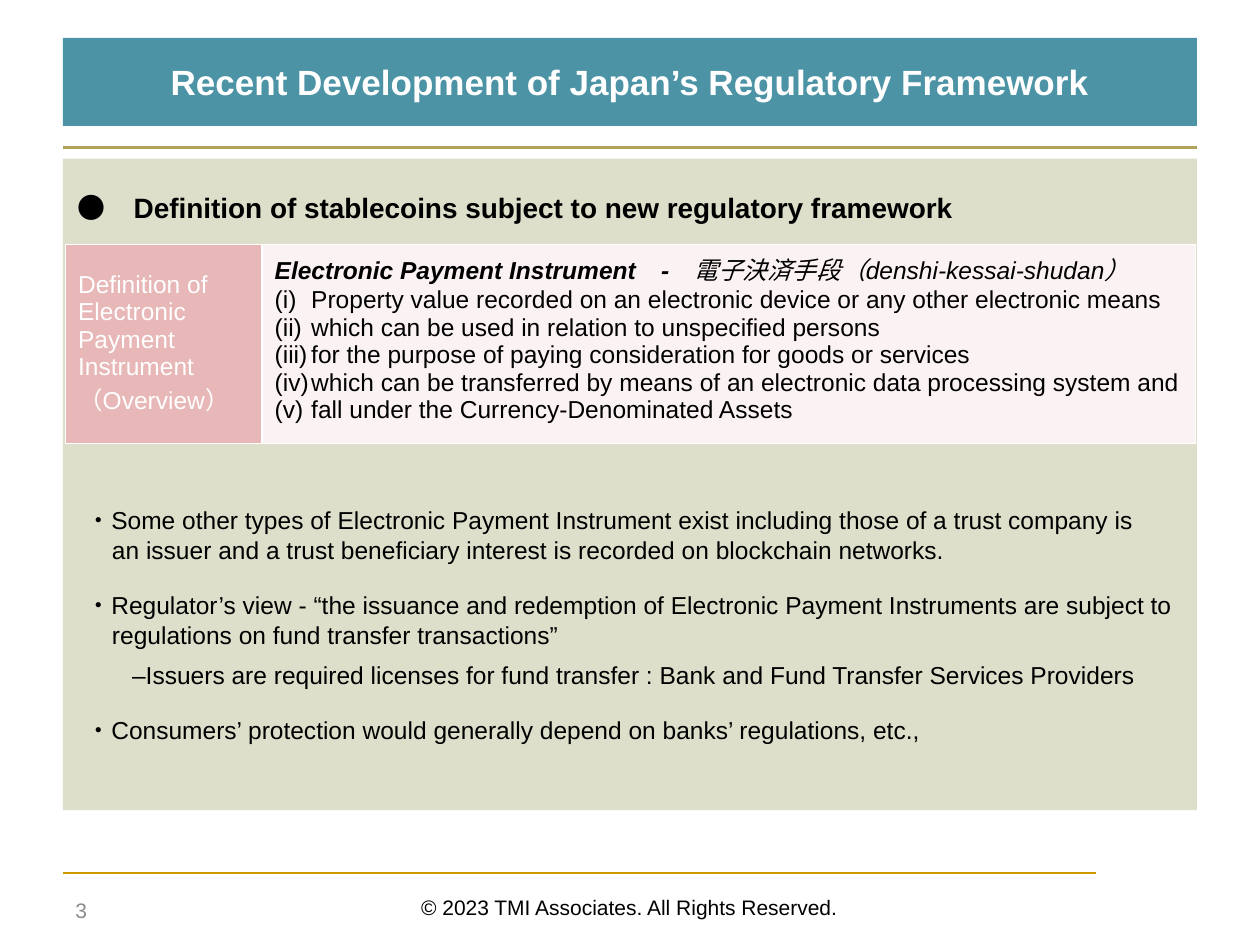
from lxml.etree import SubElement
from pptx import Presentation
from pptx.dml.color import RGBColor
from pptx.enum.shapes import MSO_CONNECTOR, MSO_SHAPE
from pptx.enum.text import MSO_ANCHOR, PP_ALIGN
from pptx.oxml.ns import qn
from pptx.util import Pt

PX = 9144
BLACK, WHITE = "000000", "FFFFFF"
ITEMS = [
    "Property value recorded on an electronic device or any other electronic means",
    "which can be used in relation to unspecified persons",
    "for the purpose of paying consideration for goods or services",
    "which can be transferred by means of an electronic data processing system and",
    "fall under the Currency-Denominated Assets",
]
NOTES = [
    (20, -20, 0, ["・Some other types of Electronic Payment Instrument exist including those of a trust company is",
                  "an issuer and a trust beneficiary interest is recorded on blockchain networks."]),
    (20, -20, 12, ["・Regulator’s view - “the issuance and redemption of Electronic Payment Instruments "
                   "are subject to regulations on fund transfer transactions”"]),
    (36, 0, 3, ["–Issuers are required licenses for fund transfer : Bank and Fund Transfer Services Providers"]),
    (0, 0, 12, ["・Consumers’ protection would generally depend on banks’ regulations, etc.,"]),
]


def scale(*nums):
    return [n * PX for n in nums]


def paint(target, color):
    target.solid()
    target.fore_color.rgb = RGBColor.from_string(color)


def add_run(para, text, size=14, color=BLACK, bold=False, italic=False):
    run = para.add_run()
    run.text = text
    font = run.font
    font.name, font.size, font.bold, font.italic = "Arial", Pt(size), bold, italic
    paint(font.fill, color)


def next_para(frame):
    first = frame.paragraphs[0]
    return frame.add_paragraph() if first.runs else first


def indent(para, left, first):
    props = para._p.get_or_add_pPr()
    props.set("marL", str(left * PX))
    props.set("indent", str(first * PX))
    return props


def add_text(slide, box, anchor=MSO_ANCHOR.TOP):
    frame = slide.shapes.add_textbox(*scale(*box)).text_frame
    frame.word_wrap = True
    frame.vertical_anchor = anchor
    return frame


def add_rect(slide, box, color):
    shape = slide.shapes.add_shape(MSO_SHAPE.RECTANGLE, *scale(*box))
    shape.shadow.inherit = False
    paint(shape.fill, color)
    shape.line.fill.background()
    return shape


def add_rule(slide, left, right, top, color):
    rule = slide.shapes.add_connector(MSO_CONNECTOR.STRAIGHT, *scale(left, top, right, top))
    paint(rule.line.fill, color)
    rule.line.width = Pt(1.5)
    SubElement(rule._element.spPr, qn("a:effectLst"))


def add_title(slide, box):
    frame = add_rect(slide, box, "4C93A6").text_frame
    frame.word_wrap = True
    frame.vertical_anchor = MSO_ANCHOR.MIDDLE
    para = frame.paragraphs[0]
    para.alignment = PP_ALIGN.CENTER
    add_run(para, "Recent Development of Japan’s Regulatory Framework", 20, WHITE, True)


def style_cell(cell, color):
    props = cell._tc.get_or_add_tcPr()
    for side in ("lnL", "lnR", "lnT", "lnB"):
        edge = SubElement(props, qn(f"a:{side}"), w=str(Pt(1)))
        SubElement(SubElement(edge, qn("a:solidFill")), qn("a:srgbClr"), val=WHITE)
    paint(cell.fill, color)


def add_terms(slide, box):
    table = slide.shapes.add_table(1, 2, *scale(*box)).table
    table.first_row = table.horz_banding = False
    label, body = table.rows[0].cells
    for col, width in zip(table.columns, (156, box[2] - 156)):
        col.width = width * PX
    style_cell(label, "E8B7B7")
    style_cell(body, "FBF3F3")
    label.vertical_anchor = MSO_ANCHOR.MIDDLE
    for text in ("Definition of Electronic Payment Instrument", "（Overview）"):
        add_run(next_para(label.text_frame), text, color=WHITE)
    head = body.text_frame.paragraphs[0]
    add_run(head, "Electronic Payment Instrument　-　", bold=True, italic=True)
    add_run(head, "電子決済手段（denshi-kessai-shudan）", italic=True)
    for text in ITEMS:
        para = next_para(body.text_frame)
        props = indent(para, 29, -29)
        SubElement(props, qn("a:buFont"), typeface="+mj-lt")
        SubElement(props, qn("a:buAutoNum"), type="romanLcParenBoth")
        add_run(para, text)


def add_notes(slide, box):
    frame = add_text(slide, box)
    for left, first, before, lines in NOTES:
        para = next_para(frame)
        indent(para, left, first)
        para.space_before, para.space_after = Pt(before), Pt(3)
        for num, line in enumerate(lines):
            if num:
                para.add_line_break()
            add_run(para, line)


def add_body(slide, box):
    left, top, width, _ = box
    add_rect(slide, box, "DDDFCB")
    add_terms(slide, (left + 2, top + 68, width - 3, 158))
    head = add_text(slide, (left + 2, top + 20, width - 3, 37)).paragraphs[0]
    add_run(head, "●　", 16)
    add_run(head, "Definition of stablecoins subject to new regulatory framework", 16, bold=True)
    add_notes(slide, (left + 9, top + 270, width - 18, 202))


def add_footer(slide, box):
    left, top, width, _ = box
    add_rule(slide, left, left + 820, top, "CC9900")
    para = add_text(slide, (left + 272, top + 2, 355, 50), MSO_ANCHOR.MIDDLE).paragraphs[0]
    para.alignment = PP_ALIGN.CENTER
    add_run(para, "© 2023 TMI Associates. All Rights Reserved.", 12)
    page = add_text(slide, (left, top + 9, width // 4, 40), MSO_ANCHOR.MIDDLE)
    add_run(page.paragraphs[0], "3", 12, "8C8C8C")


def main():
    deck = Presentation()
    deck.slide_width, deck.slide_height = scale(1000, 750)
    slide = deck.slides.add_slide(deck.slide_layouts[6])
    add_title(slide, (50, 30, 900, 70))
    add_rule(slide, 50, 950, 117, "B1A35A")
    add_body(slide, (50, 126, 900, 517))
    add_footer(slide, (50, 693, 900, 52))
    deck.save("out.pptx")


if __name__ == "__main__":
    main()
